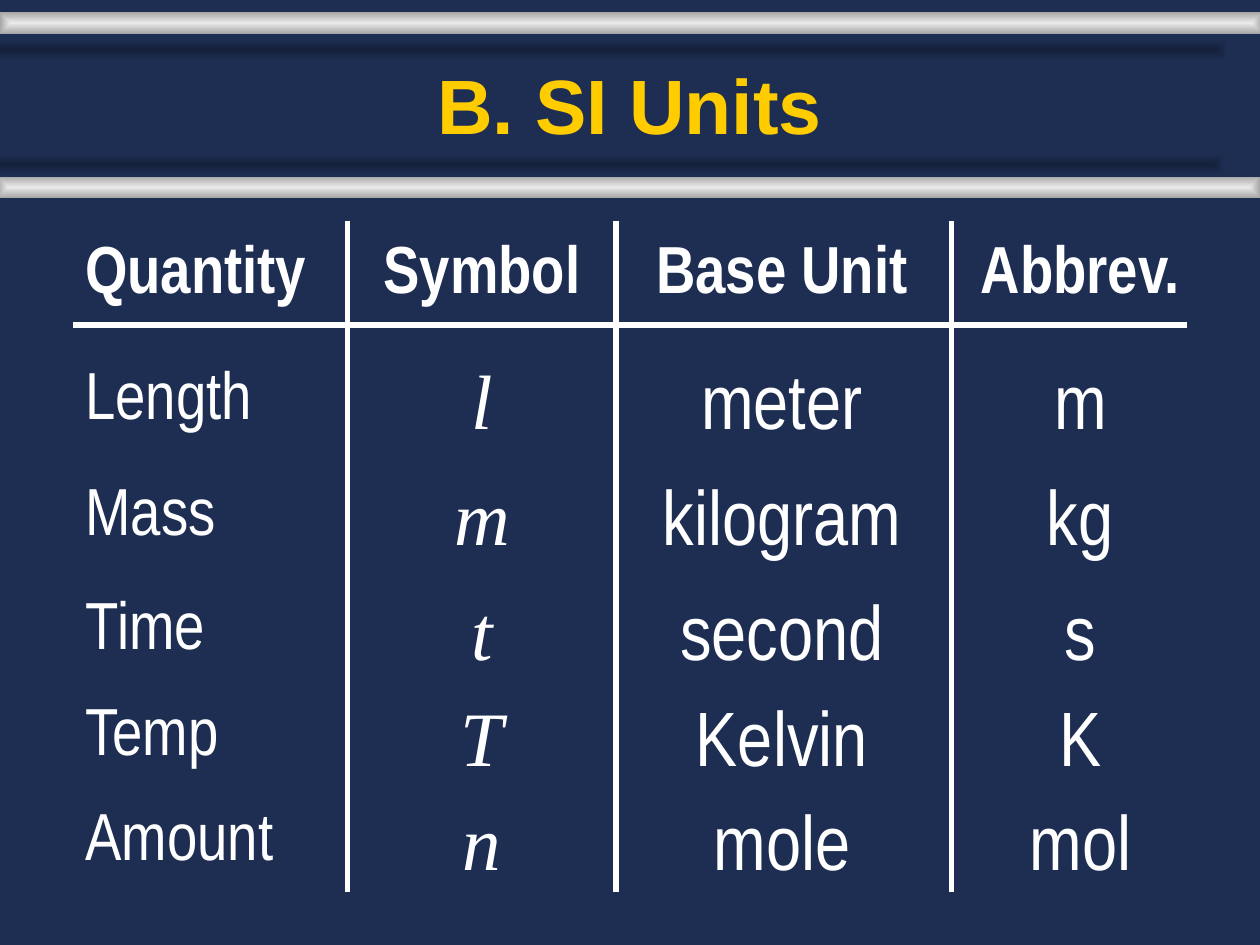
from dataclasses import dataclass

from lxml.etree import SubElement
from pptx import Presentation
from pptx.dml.color import RGBColor
from pptx.enum.shapes import MSO_CONNECTOR, MSO_SHAPE
from pptx.enum.text import MSO_ANCHOR, MSO_AUTO_SIZE, PP_ALIGN
from pptx.oxml.ns import qn
from pptx.slide import Slide
from pptx.util import Cm, Pt


@dataclass(frozen=True)
class Theme:
    background: RGBColor = RGBColor(0x1E, 0x2E, 0x53)
    shade: RGBColor = RGBColor(0x15, 0x21, 0x3B)
    silver_light: RGBColor = RGBColor(0xEA, 0xEA, 0xEA)
    silver_dark: RGBColor = RGBColor(0xA7, 0xA7, 0xA7)
    title_color: RGBColor = RGBColor(0xFF, 0xCC, 0x00)
    text_color: RGBColor = RGBColor(0xFF, 0xFF, 0xFF)
    title_font: str = "Arial"
    body_font: str = "Arial Narrow"
    symbol_font: str = "Times New Roman"
    large: int = 44
    medium: int = 38
    rule_width: float = 3


THEME = Theme()


@dataclass(frozen=True)
class Bar:
    left: float
    top: float
    center: RGBColor
    edge: RGBColor


@dataclass(frozen=True)
class TextStyle:
    size: int
    font: str = THEME.body_font
    color: RGBColor = THEME.text_color
    bold: bool = False
    italic: bool = False
    align: PP_ALIGN = PP_ALIGN.CENTER


@dataclass(frozen=True)
class Column:
    left: float
    width: float
    heading: str
    entries: tuple[str, ...]
    style: TextStyle = TextStyle(THEME.large)
    heading_align: PP_ALIGN = PP_ALIGN.CENTER


@dataclass(frozen=True)
class Rule:
    start: tuple[float, float]
    end: tuple[float, float]


BARS = (
    Bar(0, 0.25, THEME.silver_light, THEME.silver_dark),
    Bar(-0.71, 0.79, THEME.shade, THEME.background),
    Bar(-0.05, 3.56, THEME.silver_light, THEME.silver_dark),
    Bar(-0.76, 3.1, THEME.shade, THEME.background),
)
COLUMNS = (
    Column(1.47, 7.19, "Quantity", ("Length", "Mass", "Time", "Temp", "Amount"),
           TextStyle(THEME.medium, align=PP_ALIGN.LEFT), PP_ALIGN.LEFT),
    Column(7.37, 4.7, "Symbol", ("l", "m", "t", "T", "n"),
           TextStyle(THEME.large, THEME.symbol_font, italic=True)),
    Column(12.17, 7.19, "Base Unit", ("meter", "kilogram", "second", "Kelvin", "mole")),
    Column(19.43, 4.7, "Abbrev.", ("m", "kg", "s", "K", "mol")),
)
TABLE_TOP, TABLE_BOTTOM = 4.45, 17.98
ROW_TOPS = (6.99, 9.32, 11.63, 13.77, 15.88)
BOX_HEIGHTS = {THEME.medium: 1.85, THEME.large: 2.11}
RULES = (
    Rule((1.47, 6.55), (23.93, 6.55)),
    *(Rule((x, TABLE_TOP), (x, TABLE_BOTTOM)) for x in (7.01, 12.42, 19.18)),
)


def draw_bar(page: Slide, bar: Bar) -> None:
    shape = page.shapes.add_shape(
        MSO_SHAPE.RECTANGLE, Cm(bar.left), Cm(bar.top), Cm(25.45), Cm(0.43))
    shape.shadow.inherit = False
    shape.line.fill.background()
    shape.fill.gradient()
    for stop, color in zip(shape.fill.gradient_stops, (bar.center, bar.edge)):
        stop.color.rgb = color
    gradient = shape._element.spPr.find(qn("a:gradFill"))
    gradient.remove(gradient.find(qn("a:lin")))
    shading = SubElement(gradient, qn("a:path"), {"path": "shape"})
    SubElement(shading, qn("a:fillToRect"), dict.fromkeys("ltrb", "50000"))


def draw_text(page: Slide, text: str, left: float, top: float, width: float,
              height: float, style: TextStyle,
              anchor: MSO_ANCHOR = MSO_ANCHOR.TOP, space_percent: int = 50) -> None:
    box = page.shapes.add_textbox(Cm(left), Cm(top), Cm(width), Cm(height))
    frame = box.text_frame
    frame.word_wrap = True
    frame.vertical_anchor = anchor
    if anchor == MSO_ANCHOR.TOP:
        frame.auto_size = MSO_AUTO_SIZE.SHAPE_TO_FIT_TEXT
    para = frame.paragraphs[0]
    para.text = text
    para.alignment = style.align
    font = para.font
    font.name, font.size = style.font, Pt(style.size)
    font.bold, font.italic = style.bold, style.italic
    font.color.rgb = style.color
    if space_percent:
        para.space_before = Pt(0)
        spacing = para._p.pPr.find(qn("a:spcBef"))
        spacing.remove(spacing[0])
        SubElement(spacing, qn("a:spcPct"), {"val": str(space_percent * 1000)})


def draw_column(page: Slide, column: Column) -> None:
    heading = TextStyle(THEME.medium, bold=True, align=column.heading_align)
    cells = [(column.heading, TABLE_TOP, heading)]
    cells += [(entry, top, column.style) for entry, top in zip(column.entries, ROW_TOPS)]
    for text, top, style in cells:
        draw_text(page, text, column.left, top, column.width,
                  BOX_HEIGHTS[style.size], style)


def draw_rule(page: Slide, rule: Rule) -> None:
    line = page.shapes.add_connector(
        MSO_CONNECTOR.STRAIGHT, *map(Cm, rule.start), *map(Cm, rule.end))
    line.line.color.rgb = THEME.text_color
    line.line.width = Pt(THEME.rule_width)
    SubElement(line._element.spPr, qn("a:effectLst"))


def main() -> None:
    deck = Presentation()
    deck.slide_width, deck.slide_height = Cm(25.4), Cm(19.05)
    page = deck.slides.add_slide(deck.slide_layouts[6])
    page.background.fill.solid()
    page.background.fill.fore_color.rgb = THEME.background
    for bar in BARS:
        draw_bar(page, bar)
    title = TextStyle(THEME.large, THEME.title_font, THEME.title_color, bold=True)
    draw_text(page, "B. SI Units", 1.9, 0.81, 21.59, 2.34, title,
              MSO_ANCHOR.BOTTOM, space_percent=0)
    for column in COLUMNS:
        draw_column(page, column)
    for rule in RULES:
        draw_rule(page, rule)
    deck.save("out.pptx")


if __name__ == "__main__":
    main()
